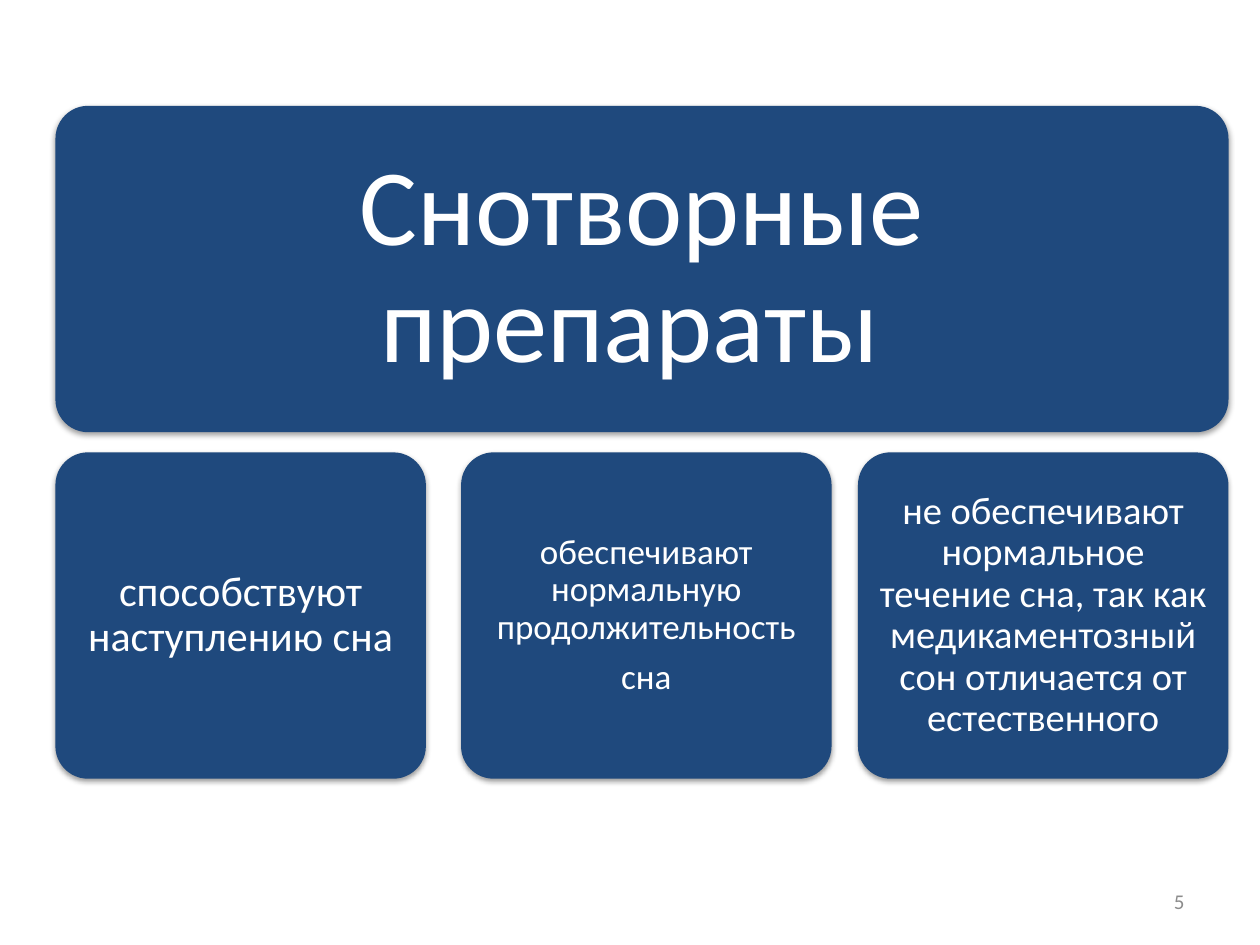
from lxml import etree
from pptx import Presentation
from pptx import util as u
from pptx.dml.color import RGBColor
from pptx.enum import shapes, text
from pptx.oxml.ns import nsdecls

theme = {
    "font": "Calibri",
    "navy": RGBColor.from_string("1F497D"),
    "white": RGBColor.from_string("FFFFFF"),
    "gray": RGBColor.from_string("8C8C8C"),
    "title": 62, "cards": (24, 20, 22), "page": 12,
}
shadow = (
    f'<a:effectLst {nsdecls("a")}>'
    '<a:outerShdw blurRad="40000" dist="20000" dir="5400000" rotWithShape="0">'
    '<a:srgbClr val="000000"><a:alpha val="38000"/></a:srgbClr>'
    '</a:outerShdw></a:effectLst>'
)


def write(shape, lines, size, color, align, inset, after=0):
    """Fill a shape with paragraphs; inset is (side, top) in inches."""
    frame = shape.text_frame
    side, top = map(u.Inches, inset)
    look = {"word_wrap": True, "vertical_anchor": text.MSO_ANCHOR.MIDDLE,
            "margin_left": side, "margin_right": side,
            "margin_top": top, "margin_bottom": top}
    for key, val in look.items():
        setattr(frame, key, val)
    for i, line in enumerate(lines):
        para = frame.paragraphs[0] if i == 0 else frame.add_paragraph()
        para.alignment = align
        if after:
            para.line_spacing = 0.9
            para.space_after = u.Pt(size * after)
        run = para.add_run()
        run.text = line
        run.font.name, run.font.size = theme["font"], u.Pt(size)
        run.font.color.rgb = color


deck = Presentation()
deck.slide_width, deck.slide_height = u.Inches(10), u.Inches(7.5)
slide = deck.slides.add_slide(deck.slide_layouts[6])

# Two rows of equal height: a full-width heading over three cards
rows, high = (0.84, 3.59), 2.59
cols, wide = (0.44, 3.66, 6.81), 2.94
full = cols[-1] + wide - cols[0]
cards = (
    ["способствуют наступлению сна"],
    ["обеспечивают нормальную продолжительность", "сна"],
    ["не обеспечивают нормальное течение сна, так как "
     "медикаментозный сон отличается от естественного"],
)
boxes = [(cols[0], rows[0], full, ["Снотворные препараты "],
          theme["title"], (0.4, 0.26))]
for left, lines, size, pad in zip(cols, cards, theme["cards"], (0.1, 0.08, 0.09)):
    boxes.append((left, rows[1], wide, lines, size, (pad, pad)))

for left, top, width, lines, size, inset in boxes:
    box = slide.shapes.add_shape(
        shapes.MSO_SHAPE.ROUNDED_RECTANGLE,
        *map(u.Inches, (left, top, width, high)))
    box.adjustments[0] = 0.1
    box.fill.solid()
    box.fill.fore_color.rgb = theme["navy"]
    box.line.fill.background()
    box.element.spPr.append(etree.fromstring(shadow))
    write(box, lines, size, theme["white"], text.PP_ALIGN.CENTER, inset, 0.35)

page = slide.shapes.add_textbox(*map(u.Inches, (7.17, 6.95, 2.33, 0.4)))
write(page, ["5"], theme["page"], theme["gray"], text.PP_ALIGN.RIGHT, (0.1, 0.05))

deck.save("out.pptx")
